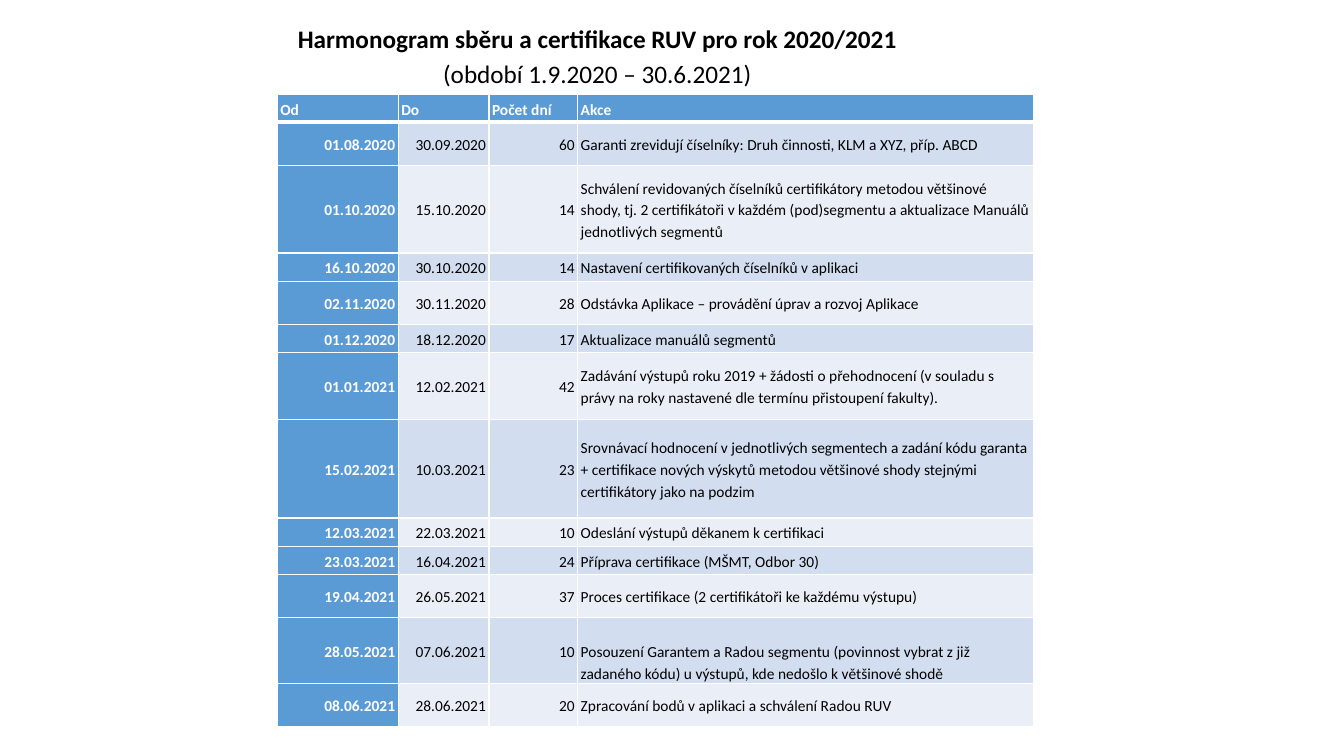
from dataclasses import dataclass

import lxml.etree
import pptx
import pptx.dml.color
import pptx.enum.text
import pptx.oxml.ns
import pptx.util

Inches = pptx.util.Inches
Pt = pptx.util.Pt
Align = pptx.enum.text.PP_ALIGN
Anchor = pptx.enum.text.MSO_ANCHOR


@dataclass(frozen=True)
class Theme:
    font: str = "Calibri"
    head: int = 18
    body: int = 11
    lead: float = 1.15
    ink: str = "000000"
    white: str = "FFFFFF"
    blue: str = "5B9BD5"
    dark: str = "D2DEEF"
    light: str = "EAEFF7"


THEME = Theme()

TITLE = ("Harmonogram sběru a certifikace RUV pro rok 2020/2021",
         "(období 1.9.2020 – 30.6.2021)")
WIDTHS = (1.2, 0.9, 0.88, 4.52)
HEADS = ("Od", "Do", "Počet dní", "Akce")
# Row height, start, end, days, action
STEPS = (
    (0.43, "01.08.2020", "30.09.2020", "60",
     "Garanti zrevidují číselníky: Druh činnosti, KLM a XYZ, příp. ABCD"),
    (0.87, "01.10.2020", "15.10.2020", "14",
     "Schválení revidovaných číselníků certifikátory metodou většinové shody, "
     "tj. 2 certifikátoři v každém (pod)segmentu a aktualizace Manuálů "
     "jednotlivých segmentů"),
    (0.28, "16.10.2020", "30.10.2020", "14",
     "Nastavení certifikovaných číselníků v aplikaci"),
    (0.43, "02.11.2020", "30.11.2020", "28",
     "Odstávka Aplikace – provádění úprav a rozvoj Aplikace"),
    (0.28, "01.12.2020", "18.12.2020", "17", "Aktualizace manuálů segmentů"),
    (0.66, "01.01.2021", "12.02.2021", "42",
     "Zadávání výstupů roku 2019 + žádosti o přehodnocení (v souladu s "
     "právy na roky nastavené dle termínu přistoupení fakulty)."),
    (0.98, "15.02.2021", "10.03.2021", "23",
     "Srovnávací hodnocení v jednotlivých segmentech a zadání kódu garanta "
     "+ certifikace nových výskytů metodou většinové shody stejnými "
     "certifikátory jako na podzim"),
    (0.28, "12.03.2021", "22.03.2021", "10",
     "Odeslání výstupů děkanem k certifikaci"),
    (0.28, "23.03.2021", "16.04.2021", "24",
     "Příprava certifikace (MŠMT, Odbor 30)"),
    (0.43, "19.04.2021", "26.05.2021", "37",
     "Proces certifikace (2 certifikátoři ke každému výstupu)"),
    (0.65, "28.05.2021", "07.06.2021", "10",
     "Posouzení Garantem a Radou segmentu (povinnost vybrat z již "
     "zadaného kódu) u výstupů, kde nedošlo k většinové shodě"),
    (0.43, "08.06.2021", "28.06.2021", "20",
     "Zpracování bodů v aplikaci a schválení Radou RUV"),
)
LOW = 11  # table row whose action sits at the bottom of its cell


def rgb(code):
    return pptx.dml.color.RGBColor.from_string(code)


def style(para, size, color, bold, align):
    para.alignment = align
    para.line_spacing = THEME.lead
    for run in para.runs:
        font = run.font
        font.name, font.size, font.bold = THEME.font, Pt(size), bold
        font.color.rgb = rgb(color)


def add_title(slide):
    title = slide.shapes.title
    title.left, title.top = Inches(1.6), Inches(0.14)
    title.width, title.height = Inches(8.65), Inches(0.8)
    frame = title.text_frame
    frame.text = "\n".join(TITLE)
    frame.word_wrap = True
    frame.auto_size = pptx.enum.text.MSO_AUTO_SIZE.NONE
    frame.vertical_anchor = Anchor.TOP
    for i, para in enumerate(frame.paragraphs):
        style(para, THEME.head, THEME.ink, i == 0, Align.CENTER)


def add_edges(cell, top, base):
    """Draw white cell borders; top and base are widths in points."""
    props = cell._tc.get_or_add_tcPr()
    tag = pptx.oxml.ns.qn
    for side, width in (("L", 1), ("R", 1), ("T", top), ("B", base)):
        line = lxml.etree.SubElement(props, tag("a:ln" + side), w=str(Pt(width)))
        fill = lxml.etree.SubElement(line, tag("a:solidFill"))
        lxml.etree.SubElement(fill, tag("a:srgbClr"), val=THEME.white)


def fill_cell(cell, text, row, col):
    strong = row == 0 or col == 0
    add_edges(cell, 3 if row == 1 else 1, 3 if row == 0 else 1)
    cell.fill.solid()
    band = THEME.dark if row % 2 else THEME.light
    cell.fill.fore_color.rgb = rgb(THEME.blue if strong else band)
    cell.margin_left = cell.margin_right = Inches(0.03)
    cell.margin_top = cell.margin_bottom = 0
    low = row == LOW and col == len(HEADS) - 1
    cell.vertical_anchor = Anchor.BOTTOM if low else Anchor.MIDDLE
    cell.text_frame.text = text
    left = row == 0 or col == len(HEADS) - 1
    style(cell.text_frame.paragraphs[0], THEME.body,
          THEME.white if strong else THEME.ink, strong,
          Align.LEFT if left else Align.RIGHT)


def add_plan(slide):
    rows = ((0.27, *HEADS), *STEPS)
    high = sum(row[0] for row in rows)
    table = slide.shapes.add_table(
        len(rows), len(HEADS), Inches(2.75), Inches(0.94),
        Inches(sum(WIDTHS)), Inches(high)).table
    for col, width in zip(table.columns, WIDTHS):
        col.width = Inches(width)
    for r, (height, *texts) in enumerate(rows):
        table.rows[r].height = Inches(height)
        for c, text in enumerate(texts):
            fill_cell(table.cell(r, c), text, r, c)


def main():
    deck = pptx.Presentation()
    deck.slide_width, deck.slide_height = Inches(13.33), Inches(7.5)
    slide = deck.slides.add_slide(deck.slide_layouts.get_by_name("Title Only"))
    add_title(slide)
    add_plan(slide)
    deck.save("out.pptx")


if __name__ == "__main__":
    main()
